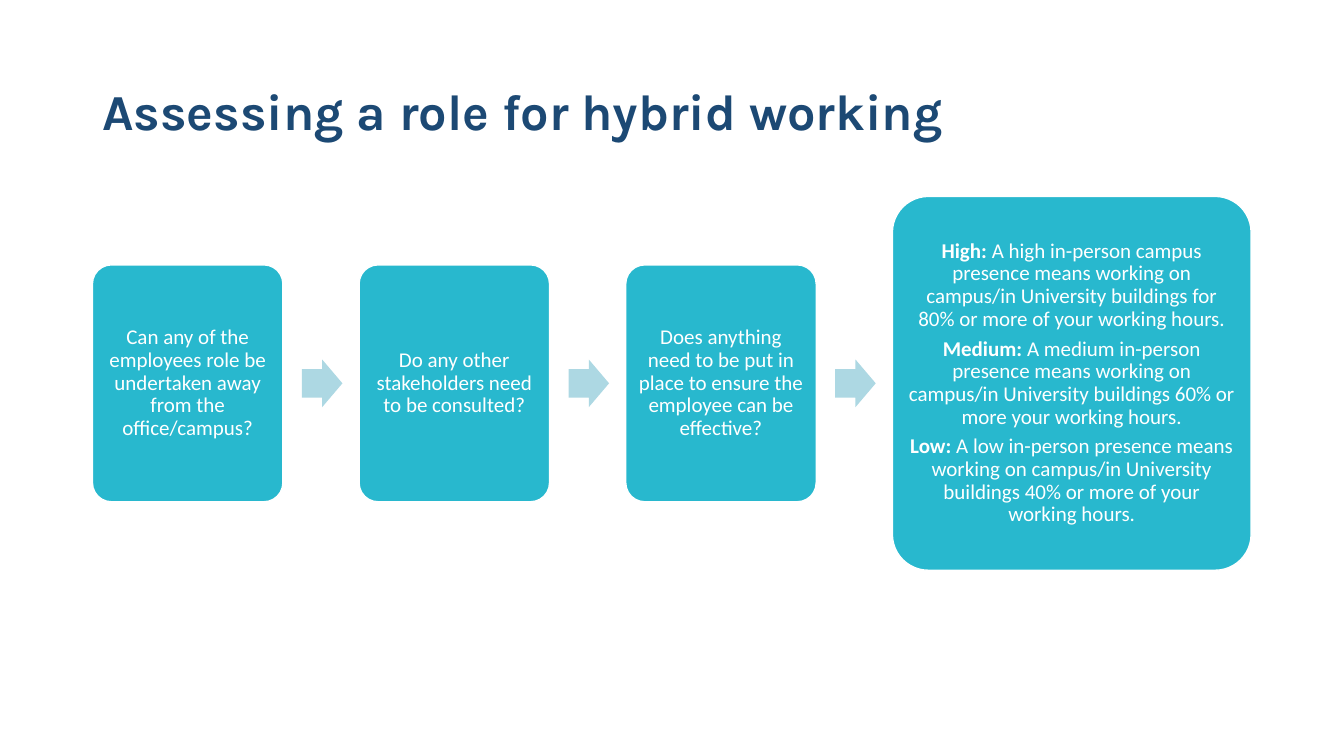
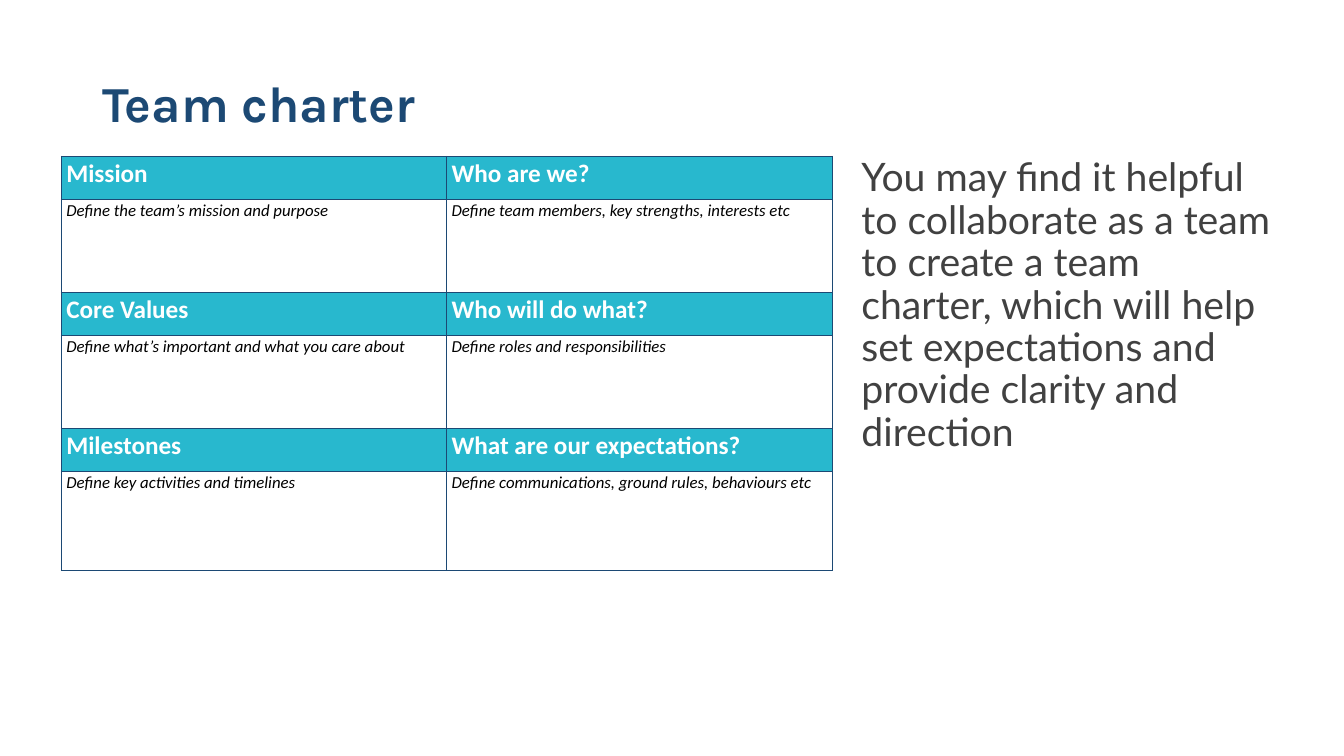
from dataclasses import dataclass

from lxml.etree import SubElement as Sub
from pptx import Presentation
from pptx.dml.color import RGBColor as RGB
from pptx.enum.shapes import MSO_SHAPE as Shape
from pptx.enum.text import MSO_ANCHOR as Anchor, PP_ALIGN as Align
from pptx.oxml.ns import qn
from pptx.util import Cm, Pt


@dataclass(frozen=True)
class Theme:
    navy: RGB = RGB(0x1C, 0x49, 0x74)
    teal: RGB = RGB(0x28, 0xB8, 0xCE)
    pale: RGB = RGB(0xAD, 0xD8, 0xE3)
    grey: RGB = RGB(0x41, 0x41, 0x41)
    white: RGB = RGB(0xFF, 0xFF, 0xFF)
    black: RGB = RGB(0, 0, 0)
    head: str = "Karla"
    body: str = "Calibri"
    aside: str = "Lato"
    title: int = 36
    note: int = 28
    label: int = 18
    card: int = 15
    hint: int = 12


T = Theme()

STEPS = [
    "Can any of the employees role be undertaken away from the office/campus?",
    "Do any other stakeholders need to be consulted?",
    "Does anything need to be put in place to ensure the employee can be effective?",
]
LEVELS = [
    ("High:", " A high in-person campus presence means working on campus/in "
              "University buildings for 80% or more of your working hours."),
    ("Medium:", " A medium in-person presence means working on campus/in "
                "University buildings 60% or more your working hours."),
    ("Low:", " A low in-person presence means working on campus/in "
             "University buildings 40% or more of your working hours."),
]
CHARTER = [
    ("Mission", "Who are we?"),
    ("Define the team’s mission and purpose",
     "Define team members, key strengths, interests etc"),
    ("Core Values", "Who will do what?"),
    ("Define what’s important and what you care about",
     "Define roles and responsibilities"),
    ("Milestones", "What are our expectations?"),
    ("Define key activities and timelines",
     "Define communications, ground rules, behaviours etc"),
]
NOTE = ("You may find it helpful to collaborate as a team to create a team charter, "
        "which will help set expectations and provide clarity and direction")


def style(font, face, size, color, bold=False, italic=False):
    font.name, font.size, font.color.rgb = face, Pt(size), color
    font.bold, font.italic = bold, italic


def add_text(slide, box, text, face, size, color, bold=False, anchor=Anchor.TOP):
    frame = slide.shapes.add_textbox(*map(Cm, box)).text_frame
    frame.word_wrap = True
    frame.vertical_anchor = anchor
    frame.text = text
    para = frame.paragraphs[0]
    para.line_spacing = 0.9
    style(para.runs[0].font, face, size, color, bold)


def add_title(slide, top, text):
    add_text(slide, (2.33, top, 29.21, 1.7), text, T.head, T.title, T.navy,
             True, Anchor.MIDDLE)


def add_form(slide, kind, box, fill, *adjust):
    form = slide.shapes.add_shape(kind, *map(Cm, box))
    form.shadow.inherit = False
    form.fill.solid()
    form.fill.fore_color.rgb = fill
    form.line.fill.background()
    for i, value in enumerate(adjust):
        form.adjustments[i] = value
    return form


def add_card(slide, box, paras):
    """Each paragraph is a pair: bold lead, plain rest."""
    card = add_form(slide, Shape.ROUNDED_RECTANGLE, box, T.teal, 0.1)
    card.line.color.rgb, card.line.width = T.white, Pt(1)
    frame = card.text_frame
    frame.word_wrap = True
    frame.vertical_anchor = Anchor.MIDDLE
    frame.margin_left = frame.margin_right = Cm(0.15)
    frame.margin_top = frame.margin_bottom = Cm(0.15)
    for i, (lead, rest) in enumerate(paras):
        para = frame.paragraphs[0] if i == 0 else frame.add_paragraph()
        para.alignment = Align.CENTER
        para.line_spacing, para.space_after = 0.9, Pt(5)
        for text, bold in ((lead, True), (rest, False)):
            if text:
                run = para.add_run()
                run.text = text
                style(run.font, T.body, T.card, T.white, bold)


def add_flow(slide, box):
    """Equal steps with arrows, then a large card as tall as the box."""
    left, top, width, height = box
    mid = top + height / 2
    pitch, wide, tall = 6.72, 4.8, 5.97
    for i, step in enumerate(STEPS):
        x = left + i * pitch
        add_card(slide, (x, mid - tall / 2, wide, tall), [("", step)])
        add_form(slide, Shape.RIGHT_ARROW, (x + 5.28, mid - 0.6, 1.02, 1.2),
                 T.pale, 0.6, 0.5)
    start = len(STEPS) * pitch
    add_card(slide, (left + start, top, width - start, height), LEVELS)


def add_edges(cell):
    props = cell._tc.get_or_add_tcPr()
    for side in ("a:lnL", "a:lnR", "a:lnT", "a:lnB"):
        line = Sub(props, qn(side), w=str(Pt(1)))
        fill = Sub(line, qn("a:solidFill"))
        Sub(fill, qn("a:srgbClr"), val=str(T.navy))


def fill_cell(cell, text, header):
    add_edges(cell)
    cell.margin_left = cell.margin_right = Cm(0.12)
    cell.margin_top = cell.margin_bottom = 0
    cell.text = text
    para = cell.text_frame.paragraphs[0]
    para.line_spacing, para.space_after = 1.07, Pt(8)
    font = para.runs[0].font
    if header:
        cell.fill.solid()
        cell.fill.fore_color.rgb = T.teal
        style(font, T.body, T.label, T.white, bold=True)
    else:
        cell.fill.background()
        style(font, T.body, T.hint, T.black, italic=True)


def add_charter(slide, box):
    """Header rows alternate with writing rows; the last takes what is left."""
    table = slide.shapes.add_table(len(CHARTER), 2, *map(Cm, box)).table
    table.first_row = table.horz_banding = False
    for col in table.columns:
        col.width = Cm(box[2] / 2)
    highs = [1.08, 2.35] * 3
    highs[-1] = box[3] - sum(highs[:-1])
    for r, pair in enumerate(CHARTER):
        table.rows[r].height = Cm(highs[r])
        for c, text in enumerate(pair):
            fill_cell(table.cell(r, c), text, r % 2 == 0)


def main():
    deck = Presentation()
    deck.slide_width, deck.slide_height = Cm(33.87), Cm(19.05)
    blank = deck.slide_layouts[6]

    slide = deck.slides.add_slide(blank)
    add_title(slide, 2.03, "Assessing a role for hybrid working")
    add_flow(slide, (2.33, 4.95, 29.2, 9.42))

    slide = deck.slides.add_slide(blank)
    add_title(slide, 1.83, "Team charter")
    add_charter(slide, (1.55, 3.94, 19.42, 10.43))
    add_text(slide, (21.46, 3.86, 11, 10.57), NOTE, T.aside, T.note, T.grey)

    deck.save("out.pptx")


if __name__ == "__main__":
    main()
